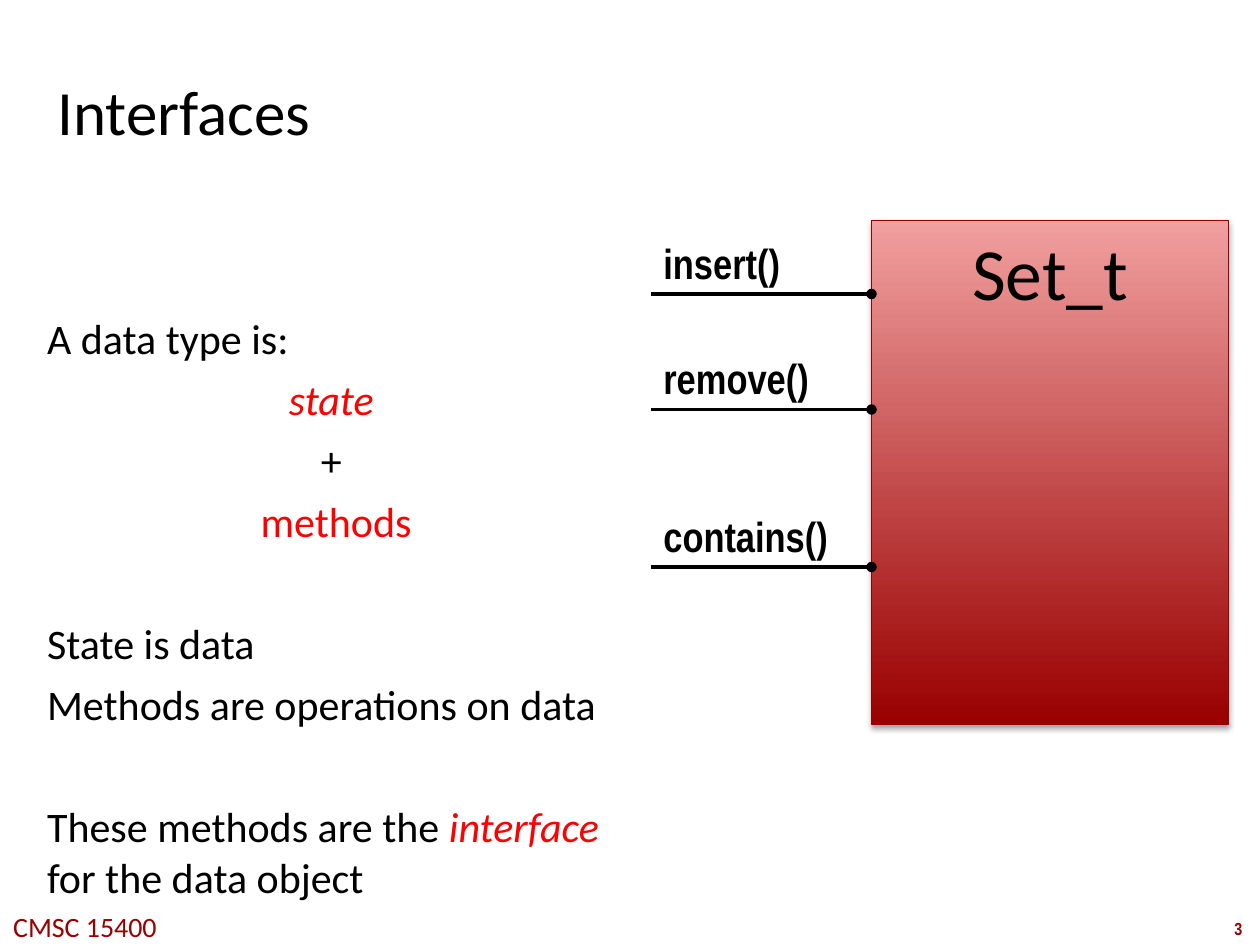
from lxml import etree
from pptx import Presentation
from pptx.dml.color import RGBColor
from pptx.enum.shapes import MSO_CONNECTOR, MSO_SHAPE
from pptx.enum.text import MSO_ANCHOR, PP_ALIGN
from pptx.oxml.ns import qn
from pptx.util import Inches, Pt

LEFT, CENTER = PP_ALIGN.LEFT, PP_ALIGN.CENTER
TOP, MIDDLE = MSO_ANCHOR.TOP, MSO_ANCHOR.MIDDLE
RECTANGLE, STRAIGHT = MSO_SHAPE.RECTANGLE, MSO_CONNECTOR.STRAIGHT

COLORS = {
    "text": "000000",
    "accent": "FF0000",
    "footer": "990000",
    "box_dark": "990000",
    "box_light": "F19F9F",
    "box_line": "960000",
}
BODY_FONT, LABEL_FONT = "Calibri", "Arial Narrow"
COLUMNS, ROWS = 120, 90  # a grid of twelve cells to the inch


def rgb(name):
    return RGBColor.from_string(COLORS[name])


def write_paragraph(paragraph, runs, size=24, font=BODY_FONT, color="text",
                    bold=False, align=LEFT, before=0):
    """Write runs given as (text, format), where format may override the color and italic."""
    paragraph.alignment = align
    paragraph.space_before = Pt(before)
    for text, changes in runs:
        run = paragraph.add_run()
        run.text = text
        run.font.name = font
        run.font.size = Pt(size)
        run.font.bold = bold
        run.font.italic = changes.get("italic", False)
        run.font.color.rgb = rgb(changes.get("color", color))


class SlideBuilder:
    def __init__(self, presentation):
        self.slide = presentation.slides.add_slide(presentation.slide_layouts[6])
        self.column = presentation.slide_width / COLUMNS
        self.row = presentation.slide_height / ROWS

    def place(self, left, top, width, height):
        return (round(left * self.column), round(top * self.row),
                round(width * self.column), round(height * self.row))

    def text_box(self, area, inset=None, anchor=TOP, wrap=True):
        frame = self.slide.shapes.add_textbox(*self.place(*area)).text_frame
        frame.word_wrap = wrap
        frame.vertical_anchor = anchor
        if inset is not None:
            frame.margin_left = frame.margin_right = Inches(inset)
            frame.margin_top = frame.margin_bottom = Inches(inset)
        return frame

    def text(self, area, text, inset=None, anchor=TOP, wrap=True, **style):
        frame = self.text_box(area, inset, anchor, wrap)
        write_paragraph(frame.paragraphs[0], [(text, {})], **style)

    def paragraphs(self, area, items, inset):
        frame = self.text_box(area, inset)
        for index, (runs, style) in enumerate(items):
            paragraph = frame.add_paragraph() if index else frame.paragraphs[0]
            write_paragraph(paragraph, runs, **style)

    def gradient_box(self, area, text, **style):
        shape = self.slide.shapes.add_shape(RECTANGLE, *self.place(*area))
        shape.fill.gradient()
        shape.fill.gradient_angle = 90
        for stop, position, name in zip(shape.fill.gradient_stops, (0, 1),
                                        ("box_dark", "box_light")):
            stop.position = position
            stop.color.rgb = rgb(name)
        shape.line.color.rgb = rgb("box_line")
        shape.line.width = Pt(0.75)
        self.drop_shadow(shape)
        shape.text_frame.vertical_anchor = TOP
        write_paragraph(shape.text_frame.paragraphs[0], [(text, {})], **style)

    def drop_shadow(self, shape):
        shape.shadow.inherit = False
        effects = shape.element.spPr.find(qn("a:effectLst"))
        shadow = etree.SubElement(effects, qn("a:outerShdw"), blurRad=str(Pt(3.1)),
                                  dist=str(Pt(1.8)), dir="5400000", rotWithShape="0")
        color = etree.SubElement(shadow, qn("a:srgbClr"), val=COLORS["text"])
        etree.SubElement(color, qn("a:alpha"), val="35000")

    def dotted_line(self, start, end, row):
        start_x, y, end_x, _ = self.place(start, row, end, 0)
        connector = self.slide.shapes.add_connector(STRAIGHT, start_x, y, end_x, y)
        connector.line.color.rgb = rgb("text")
        connector.line.width = Pt(2)
        properties = connector.element.spPr
        etree.SubElement(properties.find(qn("a:ln")), qn("a:headEnd"), type="oval")
        etree.SubElement(properties, qn("a:effectLst"))


def main():
    presentation = Presentation()
    presentation.slide_width, presentation.slide_height = Inches(10), Inches(7.5)
    builder = SlideBuilder(presentation)

    # Footer
    builder.text((115.9, 86.8, 4.1, 3.2), "3", wrap=False, size=10, font=LABEL_FONT,
                 color="footer", bold=True, align=CENTER)
    builder.text((-0.4, 86, 17, 4.4), "CMSC 15400", wrap=False, size=16,
                 color="footer", align=CENTER)

    # Title
    builder.text((5, 3.4, 110, 14.2), "Interfaces", inset=0.04, anchor=MIDDLE, size=36)

    # Explanation; a new group starts one line lower
    red, red_italic = {"color": "accent"}, {"color": "accent", "italic": True}
    line, centered, group = {"before": 6}, {"before": 6, "align": CENTER}, {"before": 41}
    builder.paragraphs((4, 29.3, 56, 48.7), [
        ([("A data type is:", {})], {}),
        ([("state ", red_italic)], centered),
        ([("+ ", {})], centered),
        ([("methods", red)], centered),
        ([("State is data", {})], group),
        ([("Methods are operations on data", {})], line),
        ([("These methods are the ", {}), ("interface", red_italic),
          (" for the data object", {})], group),
    ], inset=0.04)

    # Data type with its methods
    box_left, label_left, label_height = 83, 62, 6
    builder.gradient_box((box_left, 21, 34, 48), "Set_t", size=42, align=CENTER)
    for method, row in (("insert()", 28), ("remove()", 39), ("contains()", 54)):
        builder.dotted_line(box_left, label_left, row)
        builder.text((label_left, row - label_height, box_left - label_left, label_height),
                     method, font=LABEL_FONT, bold=True)

    presentation.save("out.pptx")


if __name__ == "__main__":
    main()
